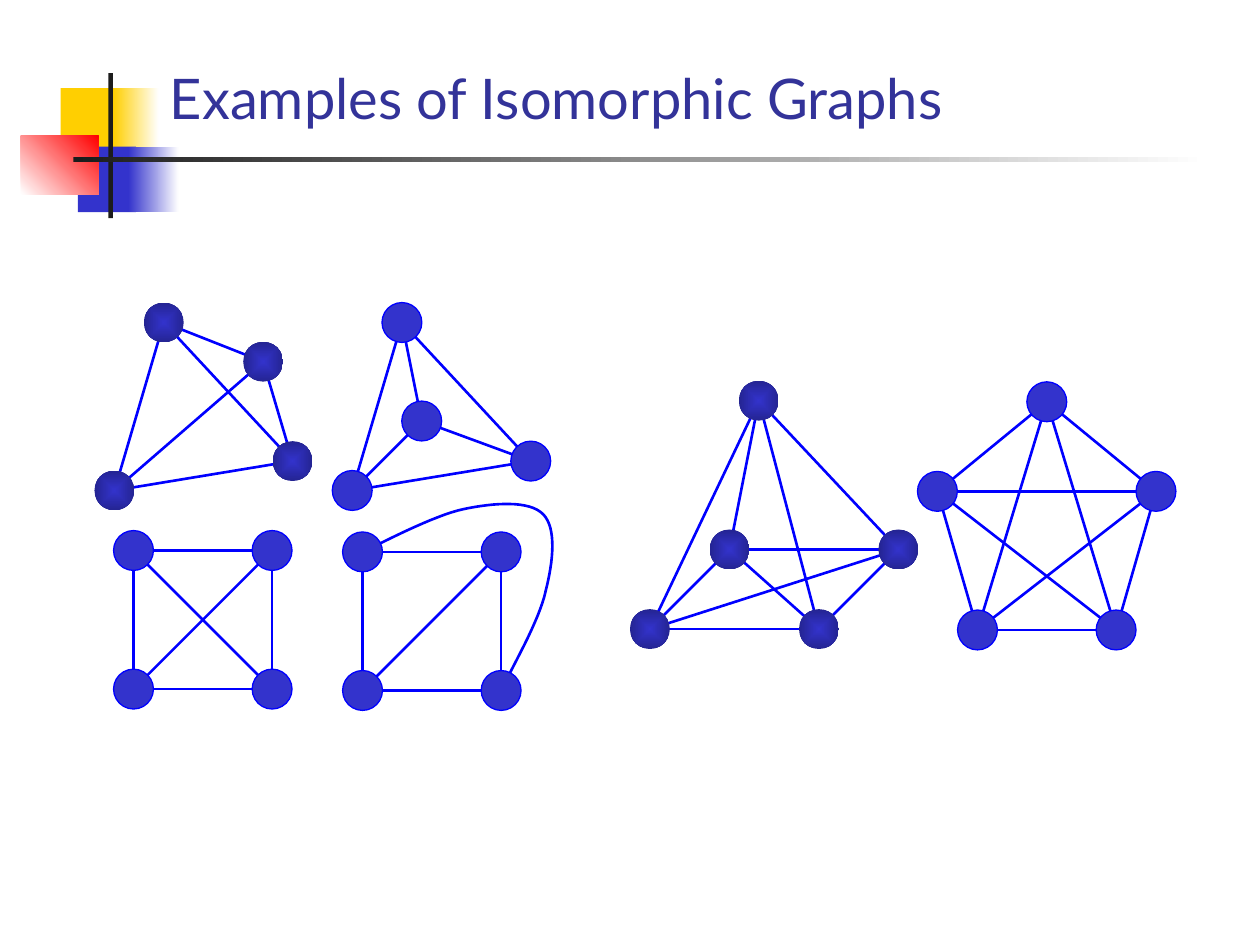
from dataclasses import dataclass
from itertools import combinations

from lxml import etree
from pptx import Presentation
from pptx import util as u
from pptx.dml.color import RGBColor
from pptx.enum import shapes, text
from pptx.oxml import ns
from pptx.shapes.autoshape import Shape
from pptx.shapes.group import GroupShape
from pptx.slide import Slide

Point = tuple[float, float]

NODE_SIZE = 22.8
NODE_BLUE = "3333CC"
NODE_DARK = "242492"
EDGE_BLUE = "0000FF"
WHITE = "FFFFFF"
INK = "1C1C1C"
CURVE_STEPS = 16


@dataclass(frozen=True)
class Block:
    left: float
    top: float
    width: float
    height: float
    start: str
    end: str | None = None
    angle: float = 0


@dataclass(frozen=True)
class Graph:
    nodes: list[Point]
    shaded: bool = False
    curved_edge: tuple[int, int] | None = None
    curve: tuple[Point, ...] = ()


def square(left: float, top: float, side: float = 79.2) -> list[Point]:
    return [(left + column * side, top + row * side) for row in (0, 1) for column in (0, 1)]


BLOCKS = [
    Block(34.7, 50.3, 34.6, 37.4, "FFCF01"),
    Block(64.8, 50.3, 25.9, 37.4, "FFCF01", WHITE),
    Block(44.6, 83.8, 33.1, 37.4, NODE_BLUE),
    Block(73.4, 83.8, 28.8, 37.4, NODE_BLUE, WHITE),
    Block(12, 77.6, 44.2, 33.4, WHITE, "FF0000", 45),
    Block(62, 41.8, 2.5, 82.8, INK),
    Block(42, 89.9, 648, 2.5, INK, WHITE),
]

GRAPHS = [
    Graph([(229.7, 184.3), (201.3, 280.3), (303.3, 263.5), (241, 240.6)]),
    Graph(square(76.3, 314.6)),
    Graph(
        square(207.2, 315.4),
        curved_edge=(0, 3),
        curve=(
            (207.2, 315.4), (216.7, 311), (247.7, 294.5), (265, 290.9),
            (282.2, 287.3), (302.4, 285.8), (310.3, 293.8),
            (318.2, 301.7), (316.1, 321.1), (311.8, 337.7),
            (308.2, 355), (291.6, 383), (286.4, 394.6),
        ),
    ),
    Graph([(93.6, 184.3), (65.4, 280.3), (167.2, 263.5), (150.4, 206.7)], shaded=True),
    Graph([(371.4, 359.5), (468, 359.5), (416.9, 314), (513.4, 314), (433.6, 229)], shaded=True),
    Graph([(535.7, 280.8), (660.6, 280.8), (558.6, 360), (637.8, 360), (598.2, 229.6)]),
]


def colour(value: str) -> RGBColor:
    return RGBColor.from_string(value)


def fill_shape(shape: Shape, start: str, end: str | None = None, angle: float = 0) -> None:
    shape.shadow.inherit = False
    if end is None:
        shape.fill.solid()
        shape.fill.fore_color.rgb = colour(start)
        return
    shape.fill.gradient()
    shape.fill.gradient_angle = angle
    for stop, position, value in zip(shape.fill.gradient_stops, (0, 1), (start, end)):
        stop.position = position
        stop.color.rgb = colour(value)


def make_radial(shape: Shape) -> None:
    gradient = shape._element.spPr.find(ns.qn("a:gradFill"))
    gradient.remove(gradient.find(ns.qn("a:lin")))
    radial = etree.SubElement(gradient, ns.qn("a:path"), {"path": "shape"})
    centre = dict.fromkeys("ltrb", "50000")
    etree.SubElement(radial, ns.qn("a:fillToRect"), centre)


def draw_block(slide: Slide, block: Block) -> None:
    shape = slide.shapes.add_shape(
        shapes.MSO_SHAPE.RECTANGLE,
        u.Pt(block.left), u.Pt(block.top), u.Pt(block.width), u.Pt(block.height),
    )
    fill_shape(shape, block.start, block.end, block.angle)
    shape.line.fill.background()


def draw_edge(group: GroupShape, start: Point, end: Point) -> None:
    connector = group.shapes.add_connector(
        shapes.MSO_CONNECTOR.STRAIGHT, *(u.Pt(value) for value in (*start, *end))
    )
    connector.line.color.rgb = colour(EDGE_BLUE)
    connector.line.width = u.Pt(1.5)
    etree.SubElement(connector._element.spPr, ns.qn("a:effectLst"))


def bezier_point(controls: tuple[Point, ...], t: float) -> Point:
    weights = ((1 - t) ** 3, 3 * t * (1 - t) ** 2, 3 * t**2 * (1 - t), t**3)
    x, y = (sum(w * v for w, v in zip(weights, axis)) for axis in zip(*controls))
    return u.Pt(x), u.Pt(y)


def draw_curve(group: GroupShape, curve: tuple[Point, ...]) -> None:
    points = [
        bezier_point(curve[first:first + 4], step / CURVE_STEPS)
        for first in range(0, len(curve) - 1, 3)
        for step in range(1, CURVE_STEPS + 1)
    ]
    builder = group.shapes.build_freeform(u.Pt(curve[0][0]), u.Pt(curve[0][1]))
    builder.add_line_segments(points, close=False)
    shape = builder.convert_to_shape()
    shape.shadow.inherit = False
    shape.fill.background()
    shape.line.color.rgb = colour(EDGE_BLUE)
    shape.line.width = u.Pt(1.5)


def draw_node(group: GroupShape, centre: Point, shaded: bool) -> None:
    left, top = (u.Pt(value - NODE_SIZE / 2) for value in centre)
    shape = group.shapes.add_shape(
        shapes.MSO_SHAPE.OVAL, left, top, u.Pt(NODE_SIZE), u.Pt(NODE_SIZE)
    )
    if shaded:
        fill_shape(shape, NODE_BLUE, NODE_DARK)
        make_radial(shape)
        shape.line.fill.background()
    else:
        fill_shape(shape, NODE_BLUE)
        shape.line.color.rgb = colour(EDGE_BLUE)
        shape.line.width = u.Pt(0.75)


def draw_graph(slide: Slide, graph: Graph) -> None:
    group = slide.shapes.add_group_shape()
    for start, end in combinations(range(len(graph.nodes)), 2):
        if (start, end) == graph.curved_edge:
            draw_curve(group, graph.curve)
        else:
            draw_edge(group, graph.nodes[start], graph.nodes[end])
    for centre in graph.nodes:
        draw_node(group, centre, graph.shaded)


def add_text(slide: Slide, content: str, *, left: float, top: float, width: float,
             height: float, size: float, font: str, color: str) -> None:
    frame = slide.shapes.add_textbox(
        u.Pt(left), u.Pt(top), u.Pt(width), u.Pt(height)
    ).text_frame
    frame.word_wrap = True
    frame.vertical_anchor = text.MSO_ANCHOR.BOTTOM
    run = frame.paragraphs[0].add_run()
    run.text = content
    run.font.size = u.Pt(size)
    run.font.name = font
    run.font.color.rgb = colour(color)


def main() -> None:
    presentation = Presentation()
    presentation.slide_width = u.Pt(720)
    presentation.slide_height = u.Pt(540)
    slide = presentation.slides.add_slide(presentation.slide_layouts[6])
    for block in BLOCKS:
        draw_block(slide, block)
    add_text(slide, "Examples of Isomorphic Graphs", left=90, top=12.2, width=613.4,
             height=66.2, size=32, font="Lato", color="333399")
    for graph in GRAPHS:
        draw_graph(slide, graph)
    presentation.save("out.pptx")


if __name__ == "__main__":
    main()
